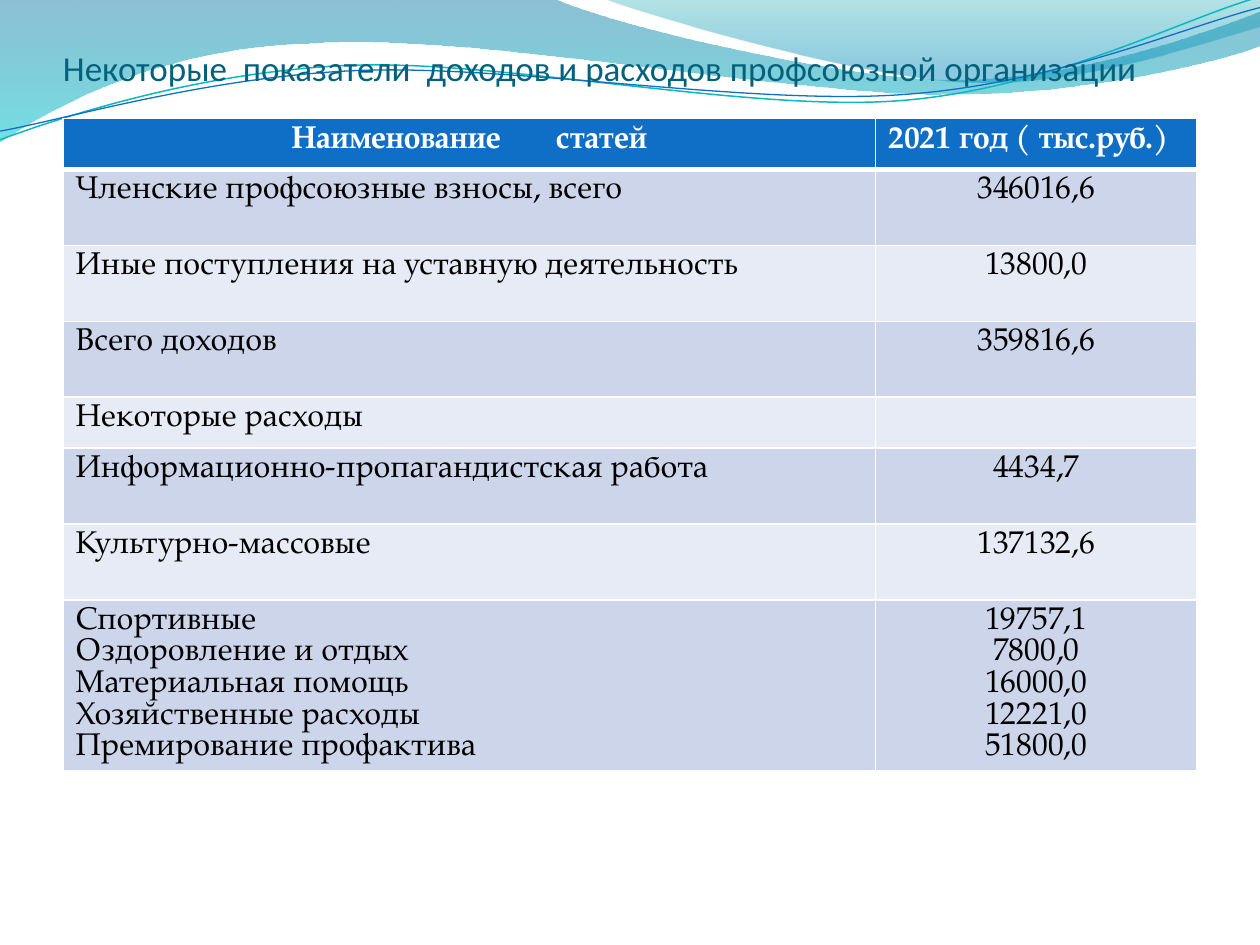
from dataclasses import dataclass

from lxml import etree
from pptx import Presentation
from pptx.dml.color import RGBColor
from pptx.enum.text import MSO_ANCHOR, PP_ALIGN
from pptx.oxml.ns import qn
from pptx.util import Pt

LEFT, CENTER = PP_ALIGN.LEFT, PP_ALIGN.CENTER
BOTTOM = MSO_ANCHOR.BOTTOM


@dataclass(frozen=True)
class Theme:
    title_font: str = "Calibri"
    table_font: str = "TeX Gyre Pagella"
    title_size: float = 20
    table_size: float = 18
    table_leading: float = 18.1
    title: str = "04617B"
    header: str = "0F6FC6"
    white: str = "FFFFFF"
    text: str = "000000"
    bands: tuple = ("CCD5EA", "E7EBF5")
    wave_blue: str = "0074A1"
    wave_cyan: str = "00C6CF"
    wave_teal: str = "00A1A9"
    wave_sky: str = "008BBF"
    line_cyan: str = "0AB8BF"


THEME = Theme()

# Wave outlines in points: a pair is a straight step, six numbers are a cubic curve.
FRONT_WAVE = [
    (0, 0), (316.8, -0.7),
    (342.7, 12.2, 478.1, 45.4, 545.8, 45.4), (614.2, 45.4, 689.8, 18.7, 720, 6.5),
    (720.7, 25.9),
    (707.8, 31.7, 626.4, 54.7, 537.1, 54), (447.8, 54, 275, 20.2, 185, 24.5),
    (92.9, 25.9, 33.1, 59.8, -0.7, 81.4), (0, 0),
]
BACK_WAVE = [
    (344.9, -0.7),
    (366.5, 7.9, 491, 44.6, 553.7, 46.8), (616.3, 49.7, 691.9, 23, 720, 15.1),
    (720, 0), (344.9, -0.7),
]
CYAN_LINE = [
    (0, 79.9), (34.6, 67, 113.8, 41, 199.4, 37.4),
    (284.4, 33.8, 427, 64.1, 513.4, 57.6), (599.8, 51.1, 675.4, 10.8, 718.6, -1.4),
]
BLUE_LINE = [
    (0, 74.9), (33.8, 69.1, 118.1, 43.9, 203.8, 40.3),
    (290.2, 36.7, 429.8, 60.5, 516.2, 54), (601.9, 48.2, 677.5, 15.1, 720, 4.3),
]

TITLE = "Некоторые  показатели  доходов и расходов профсоюзной организации"
HEADER_GAP = 27
COLUMNS = (464.4, 183.6)
ONE_LINE, TWO_LINES = 29.1, 43.4
ROWS = [
    (TWO_LINES, ["Членские профсоюзные взносы, всего"], ["346016,6"]),
    (TWO_LINES, ["Иные поступления на уставную деятельность"], ["13800,0"]),
    (TWO_LINES, ["Всего доходов"], ["359816,6"]),
    (ONE_LINE, ["Некоторые расходы"], []),
    (TWO_LINES, ["Информационно-пропагандистская работа"], ["4434,7"]),
    (TWO_LINES, ["Культурно-массовые"], ["137132,6"]),
    (ONE_LINE,
     ["Спортивные", "Оздоровление и отдых", "Материальная помощь",
      "Хозяйственные расходы", "Премирование профактива"],
     ["19757,1", "7800,0", "16000,0", "12221,0", "51800,0"]),
]


def rgb(value):
    return RGBColor.from_string(value)


def write_text(tf, lines, *, font=THEME.table_font, size=THEME.table_size,
               color=THEME.text, bold=False, align=LEFT, leading=None, gap=0):
    """Write one paragraph per line; gap widens the spaces between words."""
    for i, line in enumerate(lines):
        p = tf.paragraphs[0] if i == 0 else tf.add_paragraph()
        p.alignment = align
        if leading:
            p.line_spacing = Pt(leading)
        words = line.split(" ") if gap else [line]
        parts = [words[0]]
        for word in words[1:]:
            parts += [" ", word]
        for part in parts:
            r = p.add_run()
            r.text = part
            r.font.name, r.font.size, r.font.bold = font, Pt(size), bold
            r.font.color.rgb = rgb(color)
            if part == " ":
                r.font._element.set("spc", str(gap * 100))


def add_outline(s, left, top, steps, close):
    """Build the outline through all its points, then join triples into curves."""
    points = [(Pt(left + step[i]), Pt(top + step[i + 1]))
              for step in steps for i in range(0, len(step), 2)]
    builder = s.shapes.build_freeform(*points[0])
    builder.add_line_segments(points[1:], close=close)
    sp = builder.convert_to_shape()
    sp.shadow.inherit = False
    segments = iter(list(sp._element.iter(qn("a:lnTo"))))
    for step in steps[1:]:
        segment = next(segments)
        if len(step) == 6:
            curve = etree.Element(qn("a:cubicBezTo"))
            segment.addprevious(curve)
            for part in (segment, next(segments), next(segments)):
                curve.append(part[0])
                part.getparent().remove(part)
    return sp


def add_wave(s, left, top, steps, stops):
    """Draw a wave with a downward gradient of (position, colour, opacity) stops."""
    sp = add_outline(s, left, top, steps, True)
    sp.line.fill.background()
    sp.fill.gradient()
    sp.fill.gradient_angle = 270
    for stop, (position, color, opacity) in zip(sp.fill.gradient_stops, stops):
        stop.position = position
        stop.color.rgb = rgb(color)
        for clr in stop._gs.iter(qn("a:srgbClr")):
            etree.SubElement(clr, qn("a:alpha"), val=str(opacity * 1000))


def add_wave_line(s, left, top, steps, color, width):
    sp = add_outline(s, left, top, steps, False)
    sp.fill.background()
    sp.line.color.rgb = rgb(color)
    sp.line.width = Pt(width)


def add_waves(s, left, top):
    add_wave(s, left, top, FRONT_WAVE,
             [(0, THEME.wave_blue, 45), (1, THEME.wave_cyan, 55)])
    add_wave(s, left, top, BACK_WAVE,
             [(0, THEME.wave_teal, 30), (0.8, THEME.wave_sky, 45)])
    add_wave_line(s, left, top, CYAN_LINE, THEME.line_cyan, 0.85)
    add_wave_line(s, left, top, BLUE_LINE, THEME.header, 0.75)


def add_title(s, left, top, width, height):
    sp = s.shapes.add_textbox(Pt(left), Pt(top), Pt(width), Pt(height))
    tf = sp.text_frame
    tf.word_wrap = True
    tf.vertical_anchor = BOTTOM
    tf.margin_left = tf.margin_right = tf.margin_bottom = 0
    tf.margin_top = Pt(3.6)
    write_text(tf, [TITLE], font=THEME.title_font, size=THEME.title_size,
               color=THEME.title)


def style_cell(cell, fill, top=1, bottom=1):
    """Set the white borders, widths in points, and then the fill."""
    tc_pr = cell._tc.get_or_add_tcPr()
    for side, width in (("L", 1), ("R", 1), ("T", top), ("B", bottom)):
        ln = etree.SubElement(tc_pr, qn(f"a:ln{side}"), w=str(Pt(width)))
        solid = etree.SubElement(ln, qn("a:solidFill"))
        etree.SubElement(solid, qn("a:srgbClr"), val=THEME.white)
    cell.fill.solid()
    cell.fill.fore_color.rgb = rgb(fill)


def add_budget_table(s, left, top):
    """Place the table; its last row grows to fit its text."""
    heights = [ONE_LINE] + [row[0] for row in ROWS]
    table = s.shapes.add_table(len(heights), len(COLUMNS), Pt(left), Pt(top),
                               Pt(sum(COLUMNS)), Pt(sum(heights))).table
    for column, width in zip(table.columns, COLUMNS):
        column.width = Pt(width)
    for row, height in zip(table.rows, heights):
        row.height = Pt(height)

    headers = [("Наименование статей", CENTER, HEADER_GAP),
               ("2021 год ( тыс.руб.)", LEFT, 0)]
    for cell, (label, align, gap) in zip(table.rows[0].cells, headers):
        style_cell(cell, THEME.header, bottom=3)
        write_text(cell.text_frame, [label], color=THEME.white, bold=True,
                   align=align, leading=THEME.table_leading, gap=gap)
    for i, (_, names, amounts) in enumerate(ROWS):
        for cell, lines, align in zip(table.rows[i + 1].cells, (names, amounts),
                                      (LEFT, CENTER)):
            style_cell(cell, THEME.bands[i % 2], top=3 if i == 0 else 1)
            write_text(cell.text_frame, lines, align=align,
                       leading=THEME.table_leading)


def main():
    prs = Presentation()
    prs.slide_width, prs.slide_height = Pt(720), Pt(540)
    s = prs.slides.add_slide(prs.slide_layouts[6])
    add_waves(s, 0, 0)
    add_title(s, 36, 16.6, 648, 33.8)
    add_budget_table(s, 36, 67.7)
    prs.save("out.pptx")


if __name__ == "__main__":
    main()
